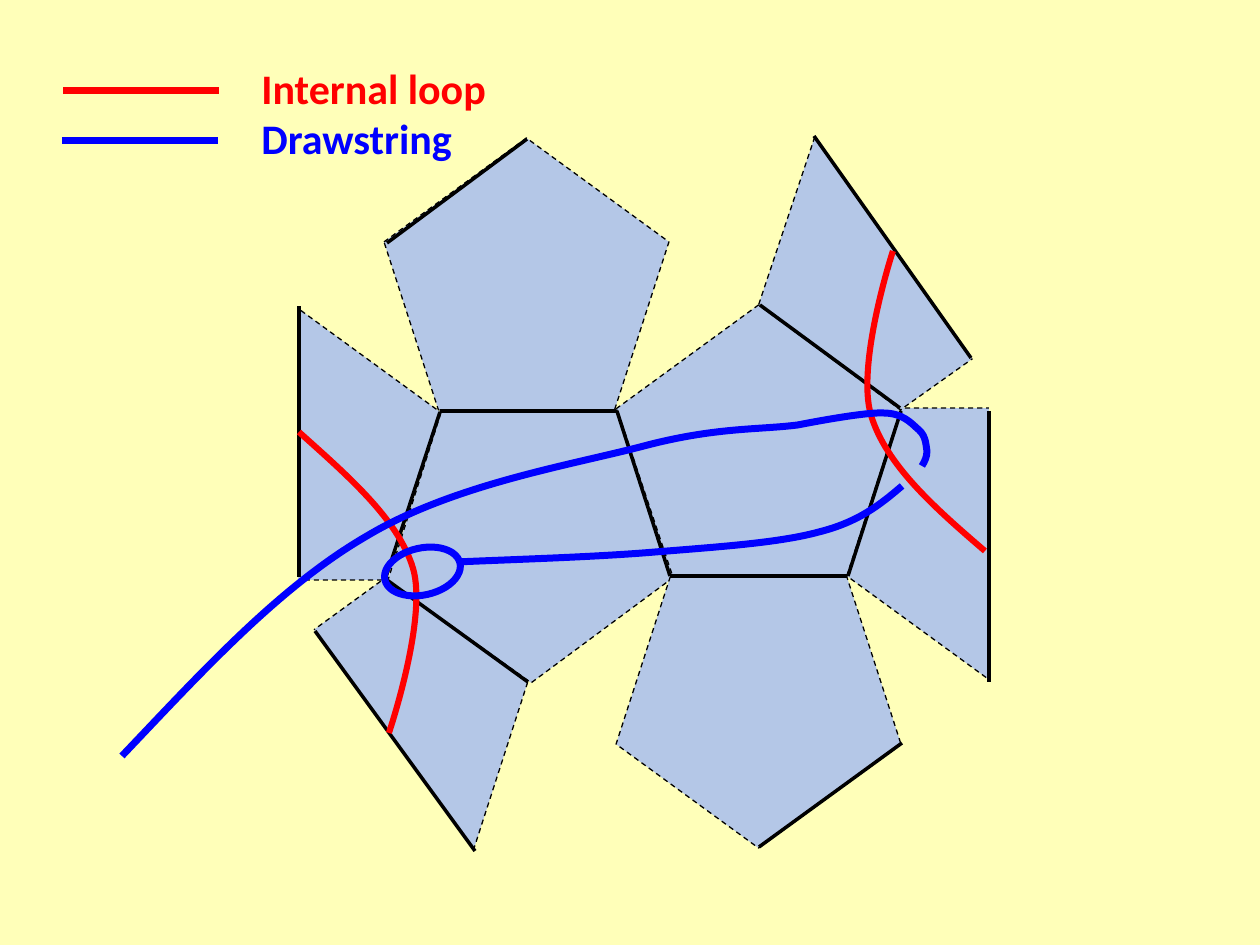
from pptx import Presentation, util as u
from pptx.dml.color import RGBColor
from pptx.enum import dml, shapes, text
from pptx.oxml.ns import qn
from lxml import etree

PX = 914400 / 126
PAPER, PANEL, SEAM = "FFFFB9", "B4C7E7", "000000"
LOOP, STRING = "FF0000", "0000FF"
PENTAGON_SIZE, MASK_SIZE = (285, 272), (158, 295)

PANELS = [
    ("pentagon", 616, 305, 0), ("pentagon", 396, 385, 35.5),
    ("pentagon", 616, 576, 180), ("pentagon", 847, 408, 180),
    ("mask", 989, 394, 0), ("pentagon", 751, 112, 324.6),
    ("mask", 881, 57, 324.6), ("pentagon", 384, 138, 0),
    ("pentagon", 155, 308, 0), ("mask", 140, 299, 180),
    ("pentagon", 251, 604, 144), ("mask", 249, 636, 144),
]
SEAMS = [
    (617, 411, 670, 576), (670, 576, 847, 576), (901, 411, 848, 576),
    (989, 411, 989, 682), (900, 408, 760, 305), (971, 358, 814, 136),
    (759, 847, 902, 743), (387, 243, 527, 139), (386, 577, 440, 412),
    (299, 577, 299, 306), (387, 580, 528, 682), (315, 631, 475, 851),
    (440, 411, 616, 411),
]
LEFT_LOOP = [(299, 432), (348, 476), (398, 519), (413, 568),
             (428, 618), (389, 733), (389, 733)]
RIGHT_LOOP = [(985, 551), (935, 508), (886, 465), (871, 415),
              (856, 364), (893, 251), (893, 251)]
LOWER_STRING = [(457, 562), (527, 559), (596, 557), (656, 552), (717, 547),
                (779, 543), (819, 532), (859, 522), (881, 504), (902, 486)]
UPPER_STRING = [(922, 466), (925, 461), (927, 457), (927, 451), (926, 445),
                (926, 436), (919, 430), (911, 423), (903, 413), (883, 413),
                (863, 412), (798, 425), (798, 425), (759, 430), (716, 427),
                (644, 446), (572, 465), (454, 484), (367, 536), (279, 587),
                (202, 672), (122, 756)]


def px(length):
    """Turn pixels into EMU."""
    return u.Emu(round(length * PX))


def rgb(value):
    """Turn a hex string into a colour."""
    return RGBColor.from_string(value)


def set_line(line, color, width):
    """Give a line its colour and width in points."""
    line.color.rgb = rgb(color)
    line.width = u.Pt(width)


def add_preset(parent, kind, box, rotation=0, fill=None):
    """Add a preset shape without shadow or outline."""
    shape = parent.add_shape(kind, *map(px, box))
    shape.rotation = rotation
    shape.shadow.inherit = False
    if fill:
        shape.fill.solid()
        shape.fill.fore_color.rgb = rgb(fill)
    else:
        shape.fill.background()
    shape.line.fill.background()
    return shape


def add_panel(parent, kind, left, top, rotation):
    """Add a dashed pentagon, or a mask that cuts one in half."""
    if kind == "mask":
        add_preset(parent, shapes.MSO_SHAPE.RECTANGLE,
                   (left, top, *MASK_SIZE), rotation, PAPER)
        return
    pentagon = add_preset(parent, shapes.MSO_SHAPE.REGULAR_PENTAGON,
                          (left, top, *PENTAGON_SIZE), rotation, PANEL)
    set_line(pentagon.line, SEAM, 0.75)
    pentagon.line.dash_style = dml.MSO_LINE.DASH


def add_line(parent, ends, color, width):
    """Add a straight line without shadow."""
    line = parent.add_connector(shapes.MSO_CONNECTOR.STRAIGHT, *map(px, ends))
    set_line(line.line, color, width)
    etree.SubElement(line._element.spPr, qn("a:effectLst"))


def add_curve(parent, controls, color, width):
    """Add an open curve whose every third control point is a knot."""
    knots = [tuple(map(px, knot)) for knot in controls[::3]]
    builder = parent.build_freeform(*knots[0])
    builder.add_line_segments(knots[1:], close=False)
    curve = builder.convert_to_shape()
    segments = list(curve._element.iter(qn("a:lnTo")))
    for index, segment in enumerate(segments):
        segment.tag = qn("a:cubicBezTo")
        handles = controls[3 * index + 1:3 * index + 3]
        for place, (x, y) in enumerate(handles):
            point = etree.Element(qn("a:pt"), x=str(px(x) - curve.left),
                                  y=str(px(y) - curve.top))
            segment.insert(place, point)
    curve.shadow.inherit = False
    curve.fill.background()
    set_line(curve.line, color, width)


def add_legend(parent, box, entries):
    """Add the legend labels, one paragraph each."""
    frame = parent.add_textbox(*map(px, box)).text_frame
    frame.word_wrap = True
    frame.auto_size = text.MSO_AUTO_SIZE.SHAPE_TO_FIT_TEXT
    for index, (label, color) in enumerate(entries):
        paragraph = frame.add_paragraph() if index else frame.paragraphs[0]
        run = paragraph.add_run()
        run.text = label
        run.font.name = "Calibri"
        run.font.size = u.Pt(24)
        run.font.bold = True
        run.font.color.rgb = rgb(color)


def main():
    """Build the folding net with its loops and drawstring."""
    deck = Presentation()
    deck.slide_width, deck.slide_height = px(1260), px(945)
    slide = deck.slides.add_slide(deck.slide_layouts[6])
    slide.background.fill.solid()
    slide.background.fill.fore_color.rgb = rgb(PAPER)
    canvas = slide.shapes

    net = canvas.add_group_shape().shapes
    for panel in PANELS:
        add_panel(net, *panel)
    for seam in SEAMS:
        add_line(net, seam, SEAM, 2)

    for loop in (LEFT_LOOP, RIGHT_LOOP):
        add_curve(canvas, loop, LOOP, 3.5)
    eyelet = add_preset(canvas, shapes.MSO_SHAPE.OVAL, (384, 548, 77, 47), 347.4)
    set_line(eyelet.line, STRING, 4)
    for string in (LOWER_STRING, UPPER_STRING):
        add_curve(canvas, string, STRING, 4)

    add_line(canvas, (63, 91, 219, 91), LOOP, 4)
    add_legend(canvas, (249, 56, 277, 152),
               [("Internal loop", LOOP), ("Drawstring", STRING)])
    add_line(canvas, (62, 141, 218, 141), STRING, 4)
    deck.save("out.pptx")


if __name__ == "__main__":
    main()
